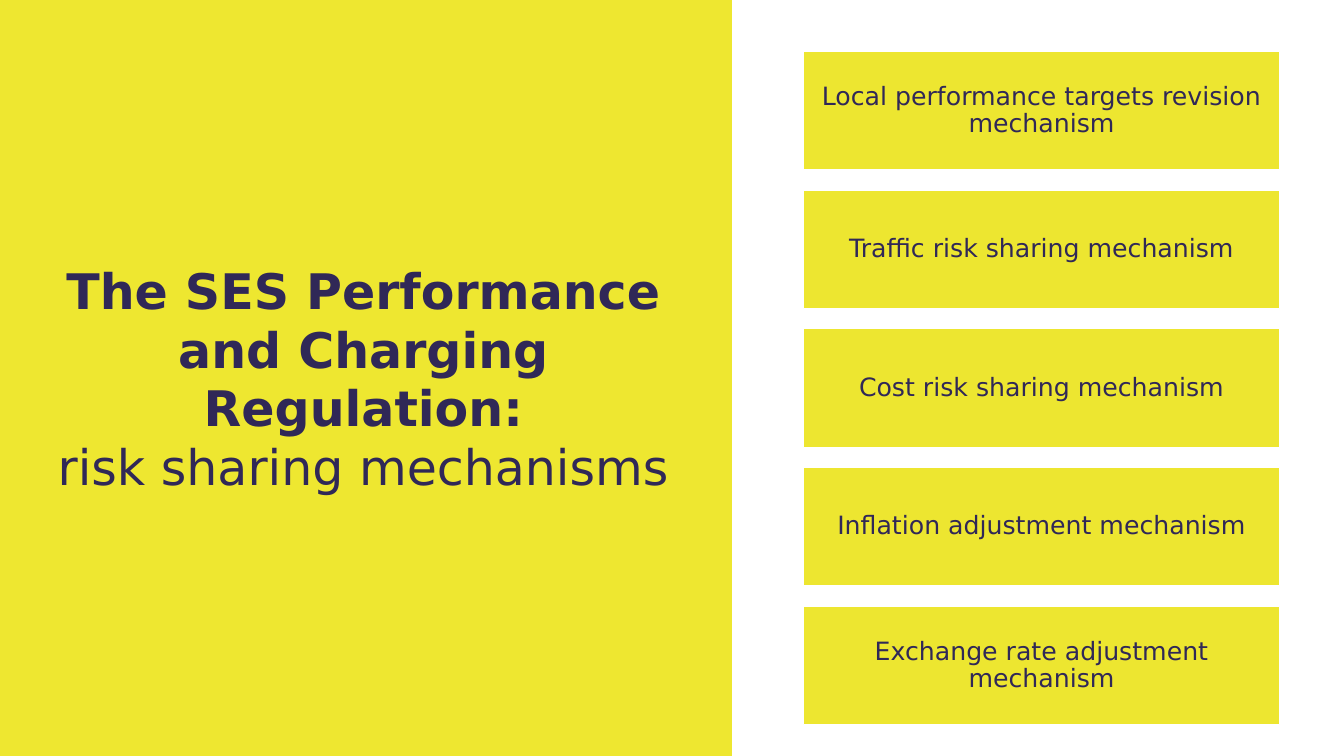
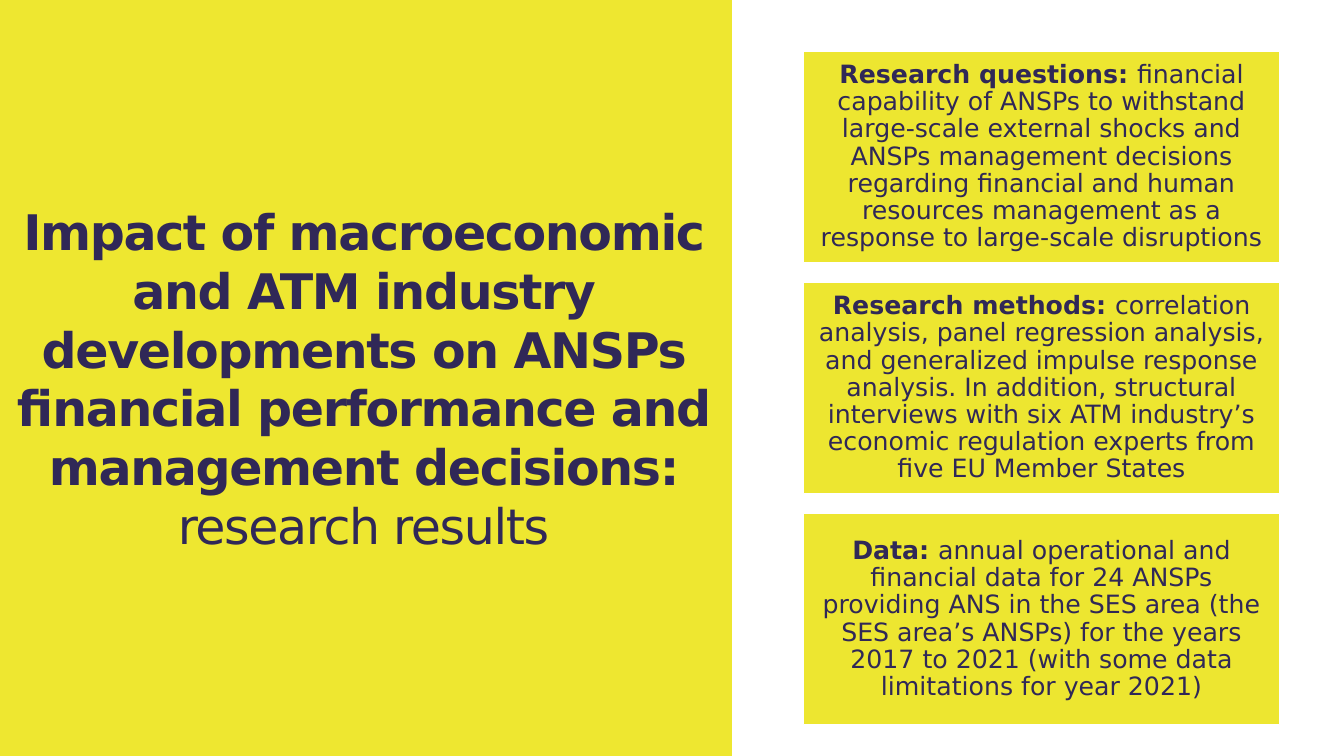
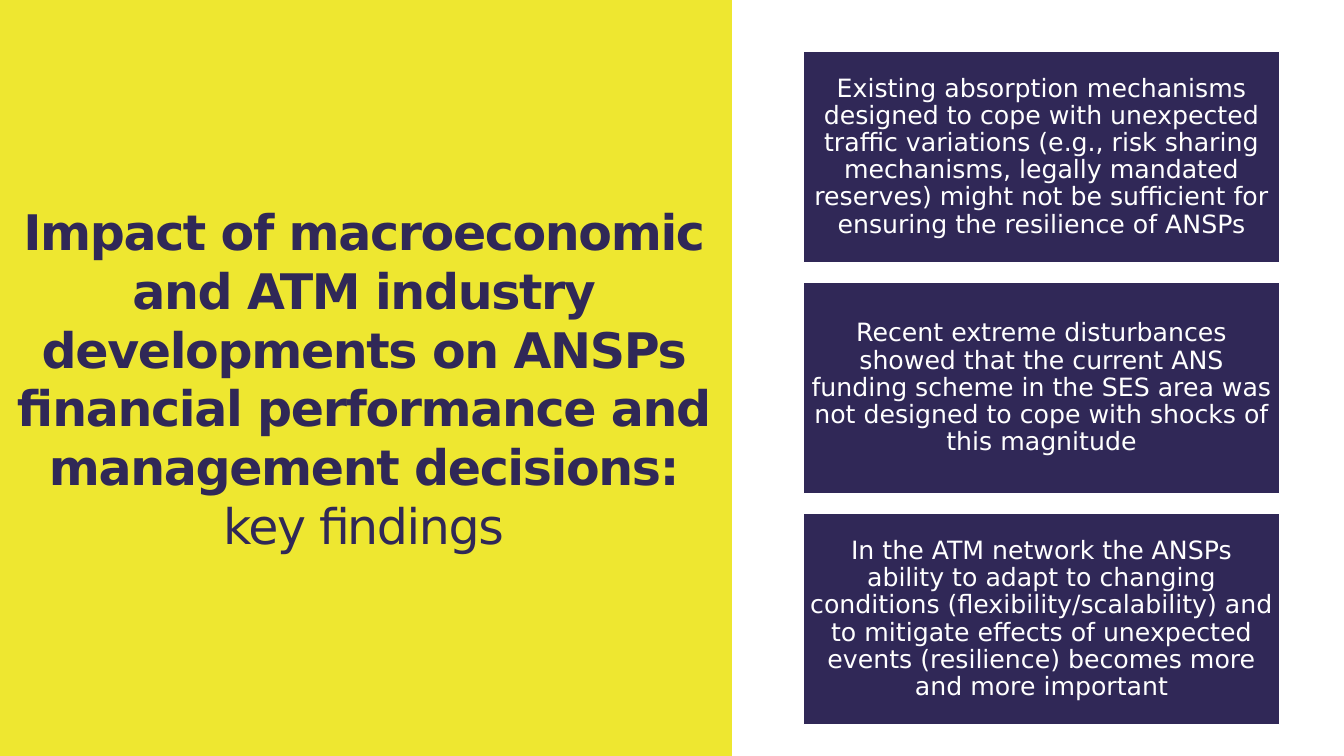
from pptx import Presentation
from pptx.dml.color import RGBColor
from pptx.enum.shapes import MSO_SHAPE
from pptx.enum.text import MSO_ANCHOR, PP_ALIGN
from pptx.util import Inches, Pt

RECT = MSO_SHAPE.RECTANGLE
MIDDLE = MSO_ANCHOR.MIDDLE
CENTER = PP_ALIGN.CENTER

# Content: title (bold part, plain part), box style, boxes as (bold lead, text)
IMPACT = ("Impact of macroeconomic and ATM industry developments on ANSPs "
          "financial performance and management decisions: ")
SLIDES = [
    {"title": ("The SES Performance and Charging Regulation:\v", "risk sharing mechanisms"),
     "tracking": 0, "fill": "box", "ink": "navy",
     "boxes": [
         ("", "Local performance targets revision mechanism"),
         ("", "Traffic risk sharing mechanism"),
         ("", "Cost risk sharing mechanism"),
         ("", "Inflation adjustment mechanism"),
         ("", "Exchange rate adjustment mechanism")]},
    {"title": (IMPACT, "research results"),
     "tracking": -1, "fill": "box", "ink": "navy",
     "boxes": [
         ("Research questions: ",
          "financial capability of ANSPs to withstand large-scale external shocks and ANSPs "
          "management decisions regarding financial and human resources management as a "
          "response to large-scale disruptions"),
         ("Research methods: ",
          "correlation analysis, panel regression analysis, and generalized impulse response "
          "analysis. In addition, structural interviews with six ATM industry’s economic "
          "regulation experts from five EU Member States"),
         ("Data: ",
          "annual operational and financial data for 24 ANSPs providing ANS in the SES area "
          "(the SES area’s ANSPs) for the years 2017 to 2021 (with some data limitations for "
          "year 2021)")]},
    {"title": (IMPACT, "key findings"),
     "tracking": -1, "fill": "navy", "ink": "white",
     "boxes": [
         ("", "Existing absorption mechanisms designed to cope with unexpected traffic "
              "variations (e.g., risk sharing mechanisms, legally mandated reserves) might not "
              "be sufficient for ensuring the resilience of ANSPs"),
         ("", "Recent extreme disturbances showed that the current ANS funding scheme in the "
              "SES area was not designed to cope with shocks of this magnitude"),
         ("", "In the ATM network the ANSPs ability to adapt to changing conditions "
              "(flexibility/scalability) and to mitigate effects of unexpected events "
              "(resilience) becomes more and more important")]},
]

# Shared style and layout, in inches and points
COLORS = {"panel": "EEE730", "box": "EDE630", "navy": "302857", "white": "FFFFFF"}
FONT = "DejaVu Sans"
WIDTH, HEIGHT = 13.33, 7.5
PANEL = (0, 0, 7.26, HEIGHT)
TITLE = (0, 1.93, 7.21, 3.64)
STACK_LEFT, STACK_TOP, STACK_WIDTH, STACK_HEIGHT = 7.97, 0.51, 4.72, 6.68
GAP = 0.2
TITLE_STYLE = {"size": 35, "inset": 0.12, "spacing": 1.0}
BOX_STYLE = {"size": 18, "inset": 0.06, "spacing": 0.9}


def rgb(name):
    return RGBColor.from_string(COLORS[name])


def add_rect(slide, frame, fill, line=None):
    s = slide.shapes.add_shape(RECT, *map(Inches, frame))
    s.shadow.inherit = False
    s.fill.solid()
    s.fill.fore_color.rgb = rgb(fill)
    if line:
        s.line.color.rgb = rgb(line)
        s.line.width = Pt(1)
    else:
        s.line.fill.background()
    return s


def write(shape, parts, ink, style, tracking=0):
    """Fill a shape with one centred paragraph: a bold part, then a plain part."""
    tf = shape.text_frame
    tf.word_wrap = True
    tf.vertical_anchor = MIDDLE
    for side in ("left", "right", "top", "bottom"):
        setattr(tf, f"margin_{side}", Inches(style["inset"]))
    p = tf.paragraphs[0]
    p.alignment = CENTER
    p.line_spacing = style["spacing"]
    for text, bold in zip(parts, (True, False)):
        if not text:
            continue
        r = p.add_run()
        r.text = text.rstrip("\v")
        for key, value in {"name": FONT, "size": Pt(style["size"]), "bold": bold}.items():
            setattr(r.font, key, value)
        r.font.color.rgb = rgb(ink)
        if tracking:
            r.font._element.set("spc", str(tracking * 100))
        if text.endswith("\v"):
            p.add_line_break()


def build_slide(prs, content):
    slide = prs.slides.add_slide(prs.slide_layouts[6])

    # Left panel with title
    add_rect(slide, PANEL, "panel")
    title = slide.shapes.add_textbox(*map(Inches, TITLE))
    write(title, content["title"], "navy", TITLE_STYLE, content["tracking"])

    # Right stack of equal boxes
    boxes = content["boxes"]
    height = (STACK_HEIGHT - GAP * (len(boxes) - 1)) / len(boxes)
    for row, parts in enumerate(boxes):
        frame = (STACK_LEFT, STACK_TOP + row * (height + GAP), STACK_WIDTH, height)
        box = add_rect(slide, frame, content["fill"], line="white")
        write(box, parts, content["ink"], BOX_STYLE)


def main():
    prs = Presentation()
    prs.slide_width, prs.slide_height = Inches(WIDTH), Inches(HEIGHT)
    for content in SLIDES:
        build_slide(prs, content)
    prs.save("out.pptx")


if __name__ == "__main__":
    main()
